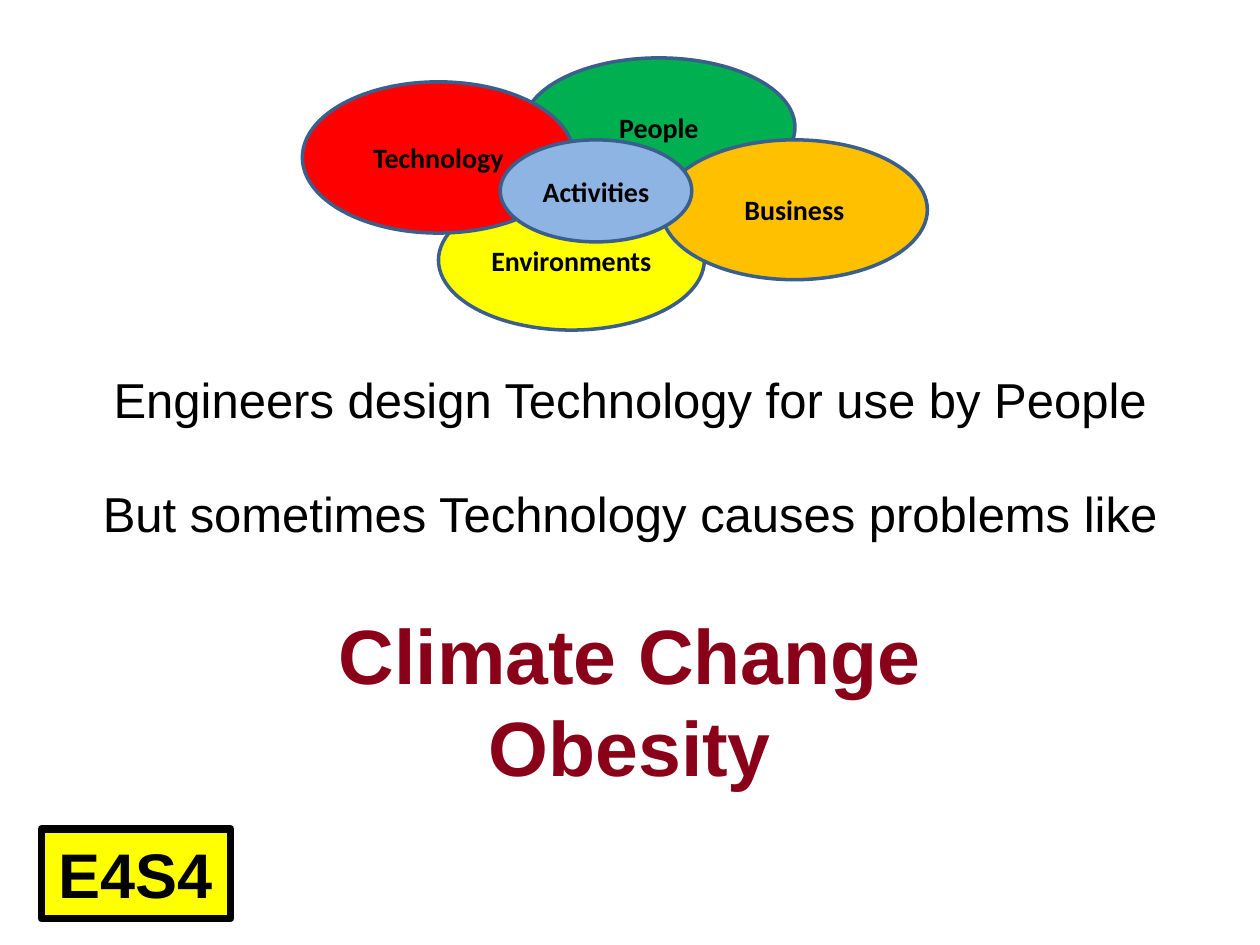
from dataclasses import dataclass

from pptx import Presentation
from pptx.dml.color import RGBColor
from pptx.enum.shapes import MSO_SHAPE as Preset
from pptx.enum.text import MSO_ANCHOR as Anchor, MSO_AUTO_SIZE as AutoSize, PP_ALIGN as Align
from pptx.util import Inches, Pt

# Grid of square cells covering the slide
COLUMNS, ROWS = 100, 75
CELL = Inches(10) // COLUMNS

BLACK, YELLOW, MAROON, OUTLINE = "000000", "FFFF00", "890018", "3A5F8C"


@dataclass
class Area:
    column: float
    row: float
    columns: float
    rows: float

    def lengths(self) -> list[int]:
        return [round(n * CELL) for n in (self.column, self.row, self.columns, self.rows)]


@dataclass
class Label:
    text: str
    size: float
    font: str = "Arial"
    color: str = BLACK
    bold: bool = True
    space_before: float = 0


@dataclass
class Topic:
    name: str
    area: Area
    fill: str


TOPICS = [
    Topic("People", Area(41.5, 4.6, 21.6, 11), "00B050"),
    Topic("Environments", Area(34.8, 15.1, 21.1, 11.1), YELLOW),
    Topic("Technology", Area(24, 6.5, 21.6, 12), "FF0000"),
    Topic("Business", Area(52.5, 11.1, 21.1, 11.1), "FFC000"),
    Topic("Activities", Area(39.7, 11.1, 15.2, 8.1), "8EB4E3"),
]

MESSAGE = [
    Label("Engineers design Technology for use by People", 28, bold=False),
    Label("But sometimes Technology causes problems like", 28, bold=False, space_before=32),
    Label("Climate Change", 44, color=MAROON, space_before=37),
    Label("Obesity", 44, color=MAROON),
]


def rgb(color: str) -> RGBColor:
    return RGBColor.from_string(color)


def write(paragraph, label: Label) -> None:
    paragraph.text = label.text
    paragraph.alignment = Align.CENTER
    paragraph.space_before = Pt(label.space_before)
    for run in paragraph.runs:
        run.font.name = label.font
        run.font.size = Pt(label.size)
        run.font.bold = label.bold
        run.font.color.rgb = rgb(label.color)


def draw_shape(shapes, preset, area: Area, label: Label, fill: str, line: str, width: float):
    shape = shapes.add_shape(preset, *area.lengths())
    shape.shadow.inherit = False
    shape.fill.solid()
    shape.fill.fore_color.rgb = rgb(fill)
    shape.line.color.rgb = rgb(line)
    shape.line.width = Pt(width)
    shape.text_frame.vertical_anchor = Anchor.MIDDLE
    write(shape.text_frame.paragraphs[0], label)
    return shape


def draw_message(shapes, area: Area, labels: list[Label]) -> None:
    text_frame = shapes.add_textbox(*area.lengths()).text_frame
    text_frame.word_wrap = True
    text_frame.auto_size = AutoSize.SHAPE_TO_FIT_TEXT
    for index, label in enumerate(labels):
        paragraph = text_frame.add_paragraph() if index else text_frame.paragraphs[0]
        write(paragraph, label)


def main() -> None:
    presentation = Presentation()
    presentation.slide_width = COLUMNS * CELL
    presentation.slide_height = ROWS * CELL
    slide = presentation.slides.add_slide(presentation.slide_layouts[6])

    # Message
    draw_message(slide.shapes, Area(3.3, 28.8, 93.4, 35.3), MESSAGE)

    # Course badge
    badge = draw_shape(slide.shapes, Preset.RECTANGLE, Area(3.3, 65.8, 15, 7.1),
                       Label("E4S4", 36), YELLOW, BLACK, 4.5)
    badge.text_frame.vertical_anchor = Anchor.TOP

    # Overlapping topics, back to front
    diagram = slide.shapes.add_group_shape()
    for topic in TOPICS:
        ellipse = draw_shape(diagram.shapes, Preset.OVAL, topic.area,
                             Label(topic.name, 16, "Calibri"), topic.fill, OUTLINE, 2)
        ellipse.text_frame.margin_left = ellipse.text_frame.margin_right = 0

    presentation.save("out.pptx")


if __name__ == "__main__":
    main()
